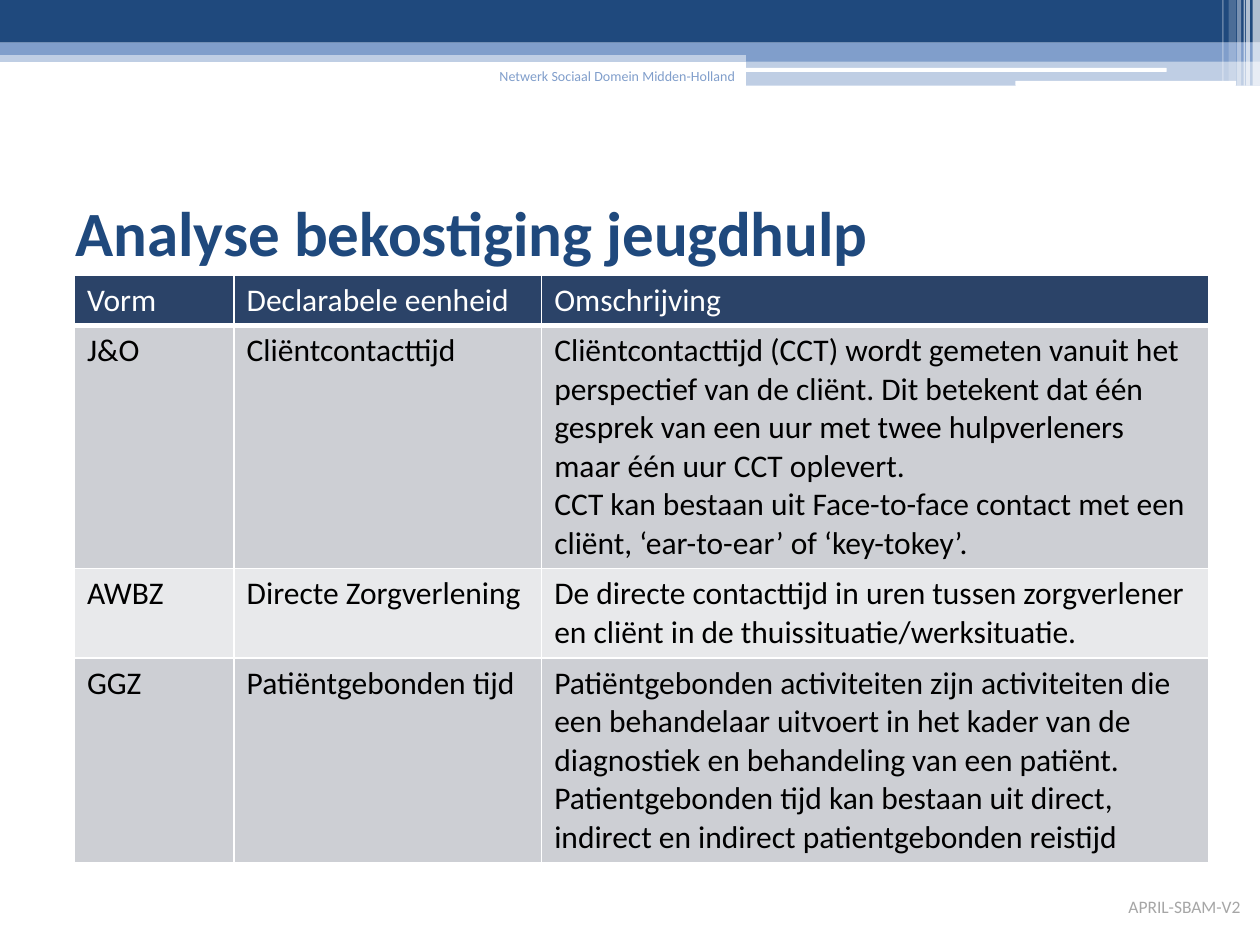
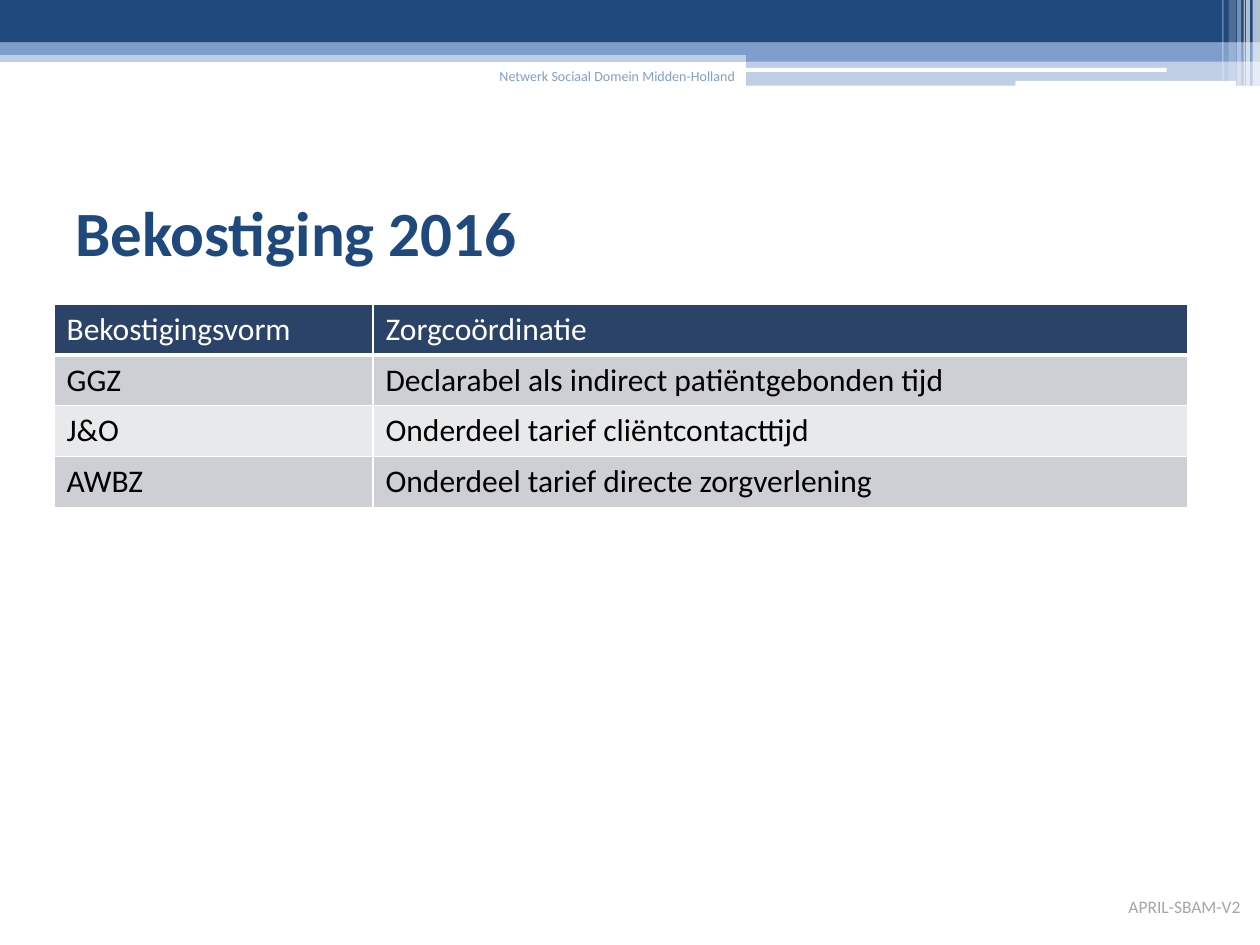
"""Build two slides on youth care funding, each with a title and a table."""
from lxml.etree import SubElement
from pptx import Presentation
from pptx.dml.color import RGBColor
from pptx.enum.shapes import MSO_SHAPE as SHAPE
from pptx.enum.text import MSO_ANCHOR as ANCHOR, MSO_AUTO_SIZE as AUTO, PP_ALIGN as ALIGN
from pptx.oxml.ns import qn
from pptx.util import Cm, Pt

NAVY = RGBColor(0x1F, 0x49, 0x7D)
BLUE = RGBColor(0x80, 0x9E, 0xCB)
WHITE = RGBColor(0xFF, 0xFF, 0xFF)
BLACK = RGBColor(0x00, 0x00, 0x00)
GREY = RGBColor(0xA6, 0xA6, 0xA6)
HEADER = RGBColor(0x2B, 0x43, 0x68)
ROW_DARK = RGBColor(0xCD, 0xCF, 0xD4)
ROW_LIGHT = RGBColor(0xE8, 0xE9, 0xEB)

FONT = "Calibri"
WIDTH, HEIGHT = 25.4, 19.05
STEP = 15.04
LINE_HEIGHT, CELL_PADDING = 0.775, 0.25

NETWORK = "Netwerk Sociaal Domein Midden-Holland"
VERSION = "APRIL-SBAM-V2"

BANDS = [
    (SHAPE.RECTANGLE, 0, 1.02, WIDTH, 0.23, BLUE, 50),
    (SHAPE.RECTANGLE, 0, 0, WIDTH, 0.86, NAVY, 100),
    (SHAPE.RECTANGLE, 0, 0.86, WIDTH, 0.25, BLUE, 100),
    (SHAPE.RECTANGLE, STEP, 0.99, WIDTH - STEP, 0.25, BLUE, 100),
    (SHAPE.RECTANGLE, STEP, 1.22, WIDTH - STEP, 0.51, BLUE, 50),
    (SHAPE.ROUNDED_RECTANGLE, 15.01, 1.37, 8.51, 0.08, WHITE, 100),
    (SHAPE.ROUNDED_RECTANGLE, 20.47, 1.63, 4.45, 0.1, WHITE, 100),
]
STRIPES = [
    (25.25, 0.15, 1.73, 65),
    (25.12, 0.08, 1.73, 65),
    (25.07, 0.03, 1.73, 60),
    (24.94, 0.08, 1.73, 40),
    (24.77, 0.15, 1.63, 20),
    (24.64, 0.03, 1.63, 30),
]

SLIDES = [
    {
        "title": "Analyse bekostiging jeugdhulp",
        "at": (1.5, 5.54),
        "columns": (3.22, 6.2, 13.44),
        "lines": (1, 6, 2, 5),
        "rows": [
            ("Vorm", "Declarabele eenheid", "Omschrijving"),
            ("J&O", "Cliëntcontacttijd",
             "Cliëntcontacttijd (CCT) wordt gemeten vanuit het perspectief van de cliënt. "
             "Dit betekent dat één gesprek van een uur met twee hulpverleners maar één uur "
             "CCT oplevert.\n"
             "CCT kan bestaan uit Face-to-face contact met een cliënt, ‘ear-to-ear’ of "
             "‘key-tokey’."),
            ("AWBZ", "Directe Zorgverlening",
             "De directe contacttijd in uren tussen zorgverlener en cliënt in de "
             "thuissituatie/werksituatie."),
            ("GGZ", "Patiëntgebonden tijd",
             "Patiëntgebonden activiteiten zijn activiteiten die een behandelaar uitvoert in "
             "het kader van de diagnostiek en behandeling van een patiënt. Patientgebonden "
             "tijd kan bestaan uit direct, indirect en indirect patientgebonden reistijd"),
        ],
    },
    {
        "title": "Bekostiging 2016",
        "at": (1.09, 6.13),
        "columns": (6.43, 16.43),
        "lines": (1, 1, 1, 1),
        "rows": [
            ("Bekostigingsvorm", "Zorgcoördinatie"),
            ("GGZ", "Declarabel als indirect patiëntgebonden tijd"),
            ("J&O", "Onderdeel tarief cliëntcontacttijd"),
            ("AWBZ", "Onderdeel tarief directe zorgverlening"),
        ],
    },
]


def write(tf, text, size=18, color=BLACK, bold=False, align=ALIGN.LEFT):
    for i, line in enumerate(text.split("\n")):
        p = tf.paragraphs[0] if i == 0 else tf.add_paragraph()
        p.alignment = align
        r = p.add_run()
        r.text = line
        r.font.name, r.font.size, r.font.bold = FONT, Pt(size), bold
        r.font.color.rgb = color


def add_text(slide, text, box, anchor=ANCHOR.TOP, wrap=True, **style):
    tf = slide.shapes.add_textbox(*map(Cm, box)).text_frame
    tf.word_wrap = wrap
    tf.auto_size = AUTO.NONE if wrap else AUTO.SHAPE_TO_FIT_TEXT
    tf.vertical_anchor = anchor
    write(tf, text, **style)


def add_band(slide, kind, left, top, width, height, color, opacity):
    sp = slide.shapes.add_shape(kind, Cm(left), Cm(top), Cm(width), Cm(height))
    sp.shadow.inherit = False
    sp.line.fill.background()
    sp.fill.solid()
    sp.fill.fore_color.rgb = color
    if opacity < 100:
        clr = sp.fill._xPr.find(qn("a:solidFill"))[0]
        SubElement(clr, qn("a:alpha"), val=str(opacity * 1000))


def set_borders(cell, bottom):
    tc_pr = cell._tc.get_or_add_tcPr()
    for i, (side, width) in enumerate(zip("LRTB", (1, 1, 1, bottom))):
        ln = SubElement(tc_pr, qn(f"a:ln{side}"), w=str(Pt(width)))
        fill = SubElement(ln, qn("a:solidFill"))
        SubElement(fill, qn("a:srgbClr"), val=str(WHITE))
        tc_pr.insert(i, ln)


def add_table(slide, rows, columns, lines, at):
    heights = [CELL_PADDING + LINE_HEIGHT * n for n in lines]
    size = (sum(columns), sum(heights))
    table = slide.shapes.add_table(len(rows), len(columns), *map(Cm, at + size)).table
    for column, width in zip(table.columns, columns):
        column.width = Cm(width)
    for i, row in enumerate(rows):
        table.rows[i].height = Cm(heights[i])
        fill = HEADER if i == 0 else (ROW_LIGHT, ROW_DARK)[i % 2]
        for j, text in enumerate(row):
            cell = table.cell(i, j)
            cell.fill.solid()
            cell.fill.fore_color.rgb = fill
            set_borders(cell, bottom=3 if i == 0 else 1)
            write(cell.text_frame, text, color=WHITE if i == 0 else BLACK)


def add_frame(slide):
    for band in BANDS:
        add_band(slide, *band)
    for left, width, height, opacity in STRIPES:
        add_band(slide, SHAPE.RECTANGLE, left, 0, width, height, WHITE, opacity)
    add_text(slide, NETWORK, (9.7, 1.24, 5.38, 1.27), size=8, color=BLUE, align=ALIGN.RIGHT)
    add_text(slide, VERSION, (22.5, 17.93, 2.79, 0.69), wrap=False, size=10, color=GREY)


def main():
    prs = Presentation()
    prs.slide_width, prs.slide_height = Cm(WIDTH), Cm(HEIGHT)
    for content in SLIDES:
        slide = prs.slides.add_slide(prs.slide_layouts[6])
        add_frame(slide)
        add_text(slide, content["title"], (1.27, 3.18, 22.86, 2.97), anchor=ANCHOR.MIDDLE,
                 size=36, color=NAVY, bold=True)
        add_table(slide, content["rows"], content["columns"], content["lines"], content["at"])
    prs.save("out.pptx")


if __name__ == "__main__":
    main()
